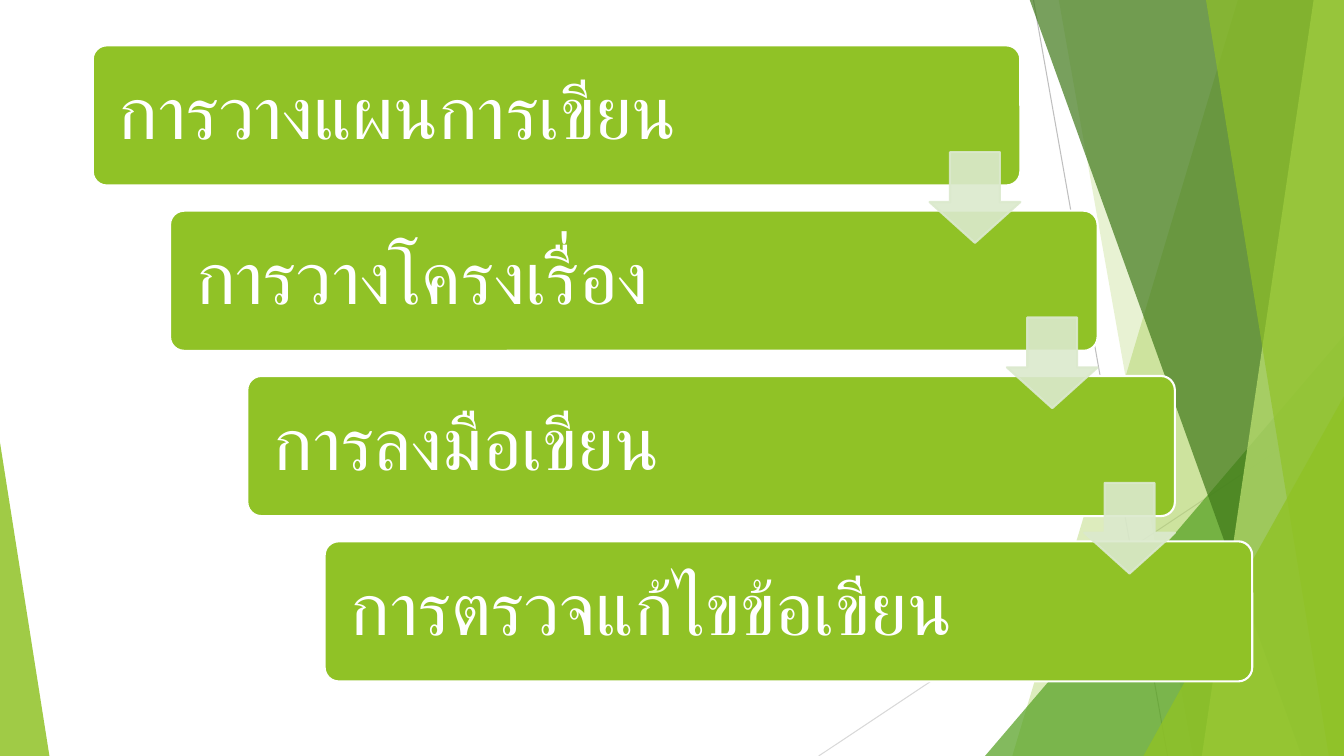
from dataclasses import dataclass

from lxml import etree
from pptx import Presentation
from pptx.dml.color import RGBColor
from pptx.enum.shapes import MSO_CONNECTOR, MSO_SHAPE
from pptx.enum.text import MSO_ANCHOR
from pptx.oxml.ns import qn
from pptx.util import Inches, Pt

STRAIGHT = MSO_CONNECTOR.STRAIGHT
TRIANGLE = MSO_SHAPE.ISOSCELES_TRIANGLE
ROUND_RECT = MSO_SHAPE.ROUNDED_RECTANGLE
DOWN_ARROW = MSO_SHAPE.DOWN_ARROW
MIDDLE = MSO_ANCHOR.MIDDLE
W, H = 13.33, 7.5
TOP = -0.01


@dataclass(frozen=True)
class Theme:
    lime: str = "90C226"
    green: str = "54A021"
    forest: str = "3F7819"
    pale: str = "C0E474"
    arrow: str = "DBE9CD"
    white: str = "FFFFFF"
    line_dark: str = "BFBFBF"
    line_light: str = "D9D9D9"
    font: str = "Roboto"
    step_size: float = 53
    hairline: float = 0.75
    outline: float = 1.5


@dataclass(frozen=True)
class Ray:
    start: tuple[float, float]
    end: tuple[float, float]
    color: str


@dataclass(frozen=True)
class Band:
    """Panel from the top to the bottom edge, closed by the right edge."""
    top_x: float
    bottom_x: float
    color: str
    alpha: int


@dataclass(frozen=True)
class Wedge:
    """Right-angled triangle standing on the bottom edge."""
    left: float
    top: float
    width: float
    apex: float
    color: str
    alpha: int


T = Theme()
RAYS = [
    Ray((10.25, 0), (11.58, H), T.line_dark),
    Ray((W, 4.03), (8.12, H), T.line_light),
]
FACETS = [
    Band(12.28, 10.04, T.lime, 30),
    Band(10.5, 11.83, T.lime, 20),
    Wedge(9.77, 3.33, 3.56, 1, T.green, 72),
    Band(10.21, 12.91, T.forest, 70),
    Band(13.03, 11.92, T.pale, 70),
    Band(11.96, 13.18, T.lime, 65),
    Wedge(11.34, 3.93, 1.99, 1, T.lime, 80),
    Wedge(0, 4.39, 0.49, 0, T.lime, 85),
]
STEPS = ["การวางแผนการเขียน", "การวางโครงเรื่อง", "การลงมือเขียน", "การตรวจแก้ไขข้อเขียน"]
STEP_X, STEP_Y = 0.92, 0.45
STEP_W, STEP_H = 9.2, 1.39
SHIFT_X, SHIFT_Y = 2.3 / 3, 1.64
ARROW_X, ARROW_Y, ARROW_SIZE = 9.22, 1.51, 0.9
INSET = 0.04
TEXT_W = 7.46
MARGIN = 0.22


def set_alpha(fill_parent, alpha: int) -> None:
    """Make the solid fill under an XML element translucent."""
    color = fill_parent.find(qn("a:solidFill"))[0]
    etree.SubElement(color, qn("a:alpha")).set("val", str(alpha * 1000))


def paint(s, color: str, alpha: int = 100, outline: str | None = None) -> None:
    s.shadow.inherit = False
    s.fill.solid()
    s.fill.fore_color.rgb = RGBColor.from_string(color)
    if outline:
        s.line.color.rgb = RGBColor.from_string(outline)
        s.line.width = Pt(T.outline)
    else:
        s.line.fill.background()
    if alpha < 100:
        props = s._element.spPr
        set_alpha(props, alpha)
        if outline:
            set_alpha(props.find(qn("a:ln")), alpha)


def add_preset(slide, kind, x: float, y: float, w: float, h: float, *adjustments: float):
    s = slide.shapes.add_shape(kind, Inches(x), Inches(y), Inches(w), Inches(h))
    for i, value in enumerate(adjustments):
        s.adjustments[i] = value
    return s


def add_ray(slide, ray: Ray) -> None:
    ends = [Inches(v) for v in (*ray.start, *ray.end)]
    s = slide.shapes.add_connector(STRAIGHT, *ends)
    s.line.color.rgb = RGBColor.from_string(ray.color)
    s.line.width = Pt(T.hairline)
    etree.SubElement(s._element.spPr, qn("a:effectLst"))


def add_facet(slide, facet: Band | Wedge) -> None:
    if isinstance(facet, Wedge):
        s = add_preset(slide, TRIANGLE, facet.left, facet.top, facet.width,
                       H - facet.top, facet.apex)
    else:
        corners = [(W, TOP), (W, H), (facet.bottom_x, H)]
        builder = slide.shapes.build_freeform(Inches(facet.top_x), Inches(TOP))
        builder.add_line_segments([(Inches(x), Inches(y)) for x, y in corners])
        s = builder.convert_to_shape()
    paint(s, facet.color, facet.alpha)


def add_text(slide, text: str, *, x: float, y: float, w: float, h: float,
             size: float, color: str, font: str) -> None:
    s = slide.shapes.add_textbox(Inches(x), Inches(y), Inches(w), Inches(h))
    tf = s.text_frame
    tf.word_wrap = True
    tf.vertical_anchor = MIDDLE
    tf.margin_left = tf.margin_right = Inches(MARGIN)
    tf.margin_top = tf.margin_bottom = Inches(MARGIN)
    p = tf.paragraphs[0]
    p.line_spacing = 0.9
    r = p.add_run()
    r.text = text
    r.font.size = Pt(size)
    r.font.name = font
    r.font.color.rgb = RGBColor.from_string(color)
    # Thai takes its typeface from the complex-script slot
    etree.SubElement(r.font._element, qn("a:cs")).set("typeface", font)


def add_step(slide, i: int, text: str) -> None:
    x, y = STEP_X + i * SHIFT_X, STEP_Y + i * SHIFT_Y
    s = add_preset(slide, ROUND_RECT, x, y, STEP_W, STEP_H, 0.1)
    paint(s, T.lime, outline=T.white)
    add_text(slide, text, x=x + INSET, y=y + INSET, w=TEXT_W, h=STEP_H - 2 * INSET,
             size=T.step_size, color=T.white, font=T.font)


def add_arrow(slide, i: int) -> None:
    s = add_preset(slide, DOWN_ARROW, ARROW_X + i * SHIFT_X, ARROW_Y + i * SHIFT_Y,
                   ARROW_SIZE, ARROW_SIZE, 0.55, 0.45)
    paint(s, T.arrow, 90, outline=T.arrow)


def main() -> None:
    prs = Presentation()
    prs.slide_width, prs.slide_height = Inches(W), Inches(H)
    slide = prs.slides.add_slide(prs.slide_layouts[6])

    # Faceted backdrop
    for ray in RAYS:
        add_ray(slide, ray)
    for facet in FACETS:
        add_facet(slide, facet)

    # Staircase of steps, then the arrows linking them
    for i, text in enumerate(STEPS):
        add_step(slide, i, text)
    for i in range(len(STEPS) - 1):
        add_arrow(slide, i)

    prs.save("out.pptx")


if __name__ == "__main__":
    main()
